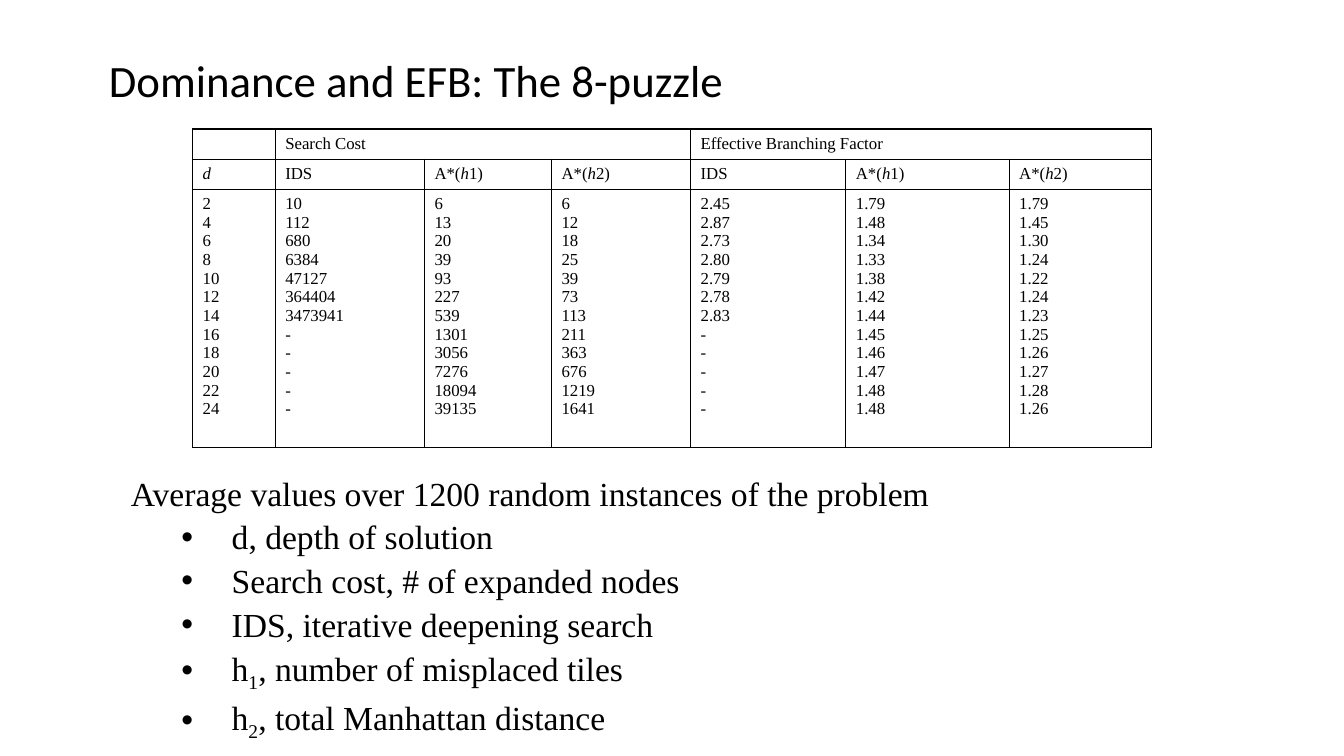
from lxml.etree import SubElement
from pptx import Presentation
from pptx.dml.color import RGBColor
from pptx.enum.text import MSO_ANCHOR, MSO_AUTO_SIZE, PP_ALIGN
from pptx.oxml.ns import qn
from pptx.util import Inches, Pt

COLORS = {"ink": "000000", "paper": "FFFFFF"}
SERIF = "Times New Roman"
ITALIC = {"i": "1"}
SUBSCRIPT = {"baseline": "-25000"}

COLUMN_WIDTHS = [0.82, 1.48, 1.26, 1.38, 1.54, 1.62, 1.41]
ROW_HEIGHTS = [0.3, 0.3, 2.56]
GROUPS = {1: "Search Cost", 4: "Effective Branching Factor"}
HEADINGS = ["_d_", "IDS", "A*(_h_1)", "A*(_h_2)", "IDS", "A*(_h_1)", "A*(_h_2)"]
RESULTS = [
    ("2", "10", "6", "6", "2.45", "1.79", "1.79"),
    ("4", "112", "13", "12", "2.87", "1.48", "1.45"),
    ("6", "680", "20", "18", "2.73", "1.34", "1.30"),
    ("8", "6384", "39", "25", "2.80", "1.33", "1.24"),
    ("10", "47127", "93", "39", "2.79", "1.38", "1.22"),
    ("12", "364404", "227", "73", "2.78", "1.42", "1.24"),
    ("14", "3473941", "539", "113", "2.83", "1.44", "1.23"),
    ("16", "-", "1301", "211", "-", "1.45", "1.25"),
    ("18", "-", "3056", "363", "-", "1.46", "1.26"),
    ("20", "-", "7276", "676", "-", "1.47", "1.27"),
    ("22", "-", "18094", "1219", "-", "1.48", "1.28"),
    ("24", "-", "39135", "1641", "-", "1.48", "1.26"),
]
NOTES_HEADING = "Average values over 1200 random instances of the problem"
NOTES = [
    "d, depth of solution",
    "Search cost, # of expanded nodes",
    "IDS, iterative deepening search",
    "h_1_, number of misplaced tiles",
    "h_2_, total Manhattan distance",
]


def color(name):
    return RGBColor.from_string(COLORS[name])


def format_font(font, name, size):
    font.name = name
    font.size = Pt(size)
    font.color.rgb = color("ink")


def write_runs(paragraph, text, size, accent):
    """Write text as runs; parts between underscores get the accent attributes."""
    for index, part in enumerate(text.split("_")):
        if part:
            run = paragraph.add_run()
            run.text = part
            format_font(run.font, SERIF, size)
            if index % 2:
                for key, value in accent.items():
                    run.font._element.set(key, value)


def write_lines(text_frame, lines, size, accent):
    for index, line in enumerate(lines):
        paragraph = text_frame.add_paragraph() if index else text_frame.paragraphs[0]
        write_runs(paragraph, line, size, accent)


def add_borders(cell):
    properties = cell._tc.get_or_add_tcPr()
    for position, side in enumerate(("lnL", "lnR", "lnT", "lnB")):
        line = SubElement(properties, qn(f"a:{side}"), w=str(Pt(1)))
        fill = SubElement(line, qn("a:solidFill"))
        SubElement(fill, qn("a:srgbClr"), val=COLORS["ink"])
        properties.insert(position, line)


def add_title(slide, text):
    title = slide.shapes.title
    title.left, title.top = Inches(0.98), Inches(0.47)
    title.width, title.height = Inches(6.36), Inches(0.64)
    text_frame = title.text_frame
    text_frame.text = text
    text_frame.word_wrap = False
    text_frame.auto_size = MSO_AUTO_SIZE.SHAPE_TO_FIT_TEXT
    text_frame.vertical_anchor = MSO_ANCHOR.TOP
    paragraph = text_frame.paragraphs[0]
    paragraph.alignment = PP_ALIGN.LEFT
    format_font(paragraph.runs[0].font, "Calibri", 32)


def add_results_table(slide):
    table = slide.shapes.add_table(
        len(ROW_HEIGHTS), len(COLUMN_WIDTHS), Inches(1.91), Inches(1.28),
        Inches(sum(COLUMN_WIDTHS)), Inches(sum(ROW_HEIGHTS))).table
    table.first_row = table.horz_banding = False
    for column, width in zip(table.columns, COLUMN_WIDTHS):
        column.width = Inches(width)
    for row, height in zip(table.rows, ROW_HEIGHTS):
        row.height = Inches(height)
    for cell in table.iter_cells():
        cell.fill.solid()
        cell.fill.fore_color.rgb = color("paper")
        add_borders(cell)

    for start, group in GROUPS.items():
        table.cell(0, start).merge(table.cell(0, start + 2))
        write_lines(table.cell(0, start).text_frame, [group], 12, ITALIC)
    corner = table.cell(0, 0).text_frame.paragraphs[0]
    SubElement(corner._p, qn("a:endParaRPr"), sz="1200")
    for index, (heading, values) in enumerate(zip(HEADINGS, zip(*RESULTS))):
        write_lines(table.cell(1, index).text_frame, [heading], 12, ITALIC)
        write_lines(table.cell(2, index).text_frame, values, 12, ITALIC)


def add_bullet(paragraph):
    paragraph.level = 1
    properties = paragraph._p.get_or_add_pPr()
    properties.set("marL", str(Inches(1)))
    properties.set("indent", str(Inches(-0.5)))
    SubElement(properties, qn("a:buFont"), typeface="Arial")
    SubElement(properties, qn("a:buChar"), char="•")


def add_notes(slide):
    box = slide.shapes.add_textbox(Inches(1.2), Inches(4.61), Inches(11.27), Inches(2.52))
    text_frame = box.text_frame
    text_frame.word_wrap = True
    text_frame.auto_size = MSO_AUTO_SIZE.SHAPE_TO_FIT_TEXT
    write_lines(text_frame, [NOTES_HEADING, *NOTES], 24, SUBSCRIPT)
    for paragraph in text_frame.paragraphs:
        paragraph.line_spacing = 1.08
    for paragraph in text_frame.paragraphs[1:]:
        add_bullet(paragraph)


def main():
    presentation = Presentation()
    presentation.slide_width = Inches(13.33)
    presentation.slide_height = Inches(7.5)
    slide = presentation.slides.add_slide(presentation.slide_layouts[5])
    add_title(slide, "Dominance and EFB: The 8-puzzle")
    add_results_table(slide)
    add_notes(slide)
    presentation.save("out.pptx")


if __name__ == "__main__":
    main()
